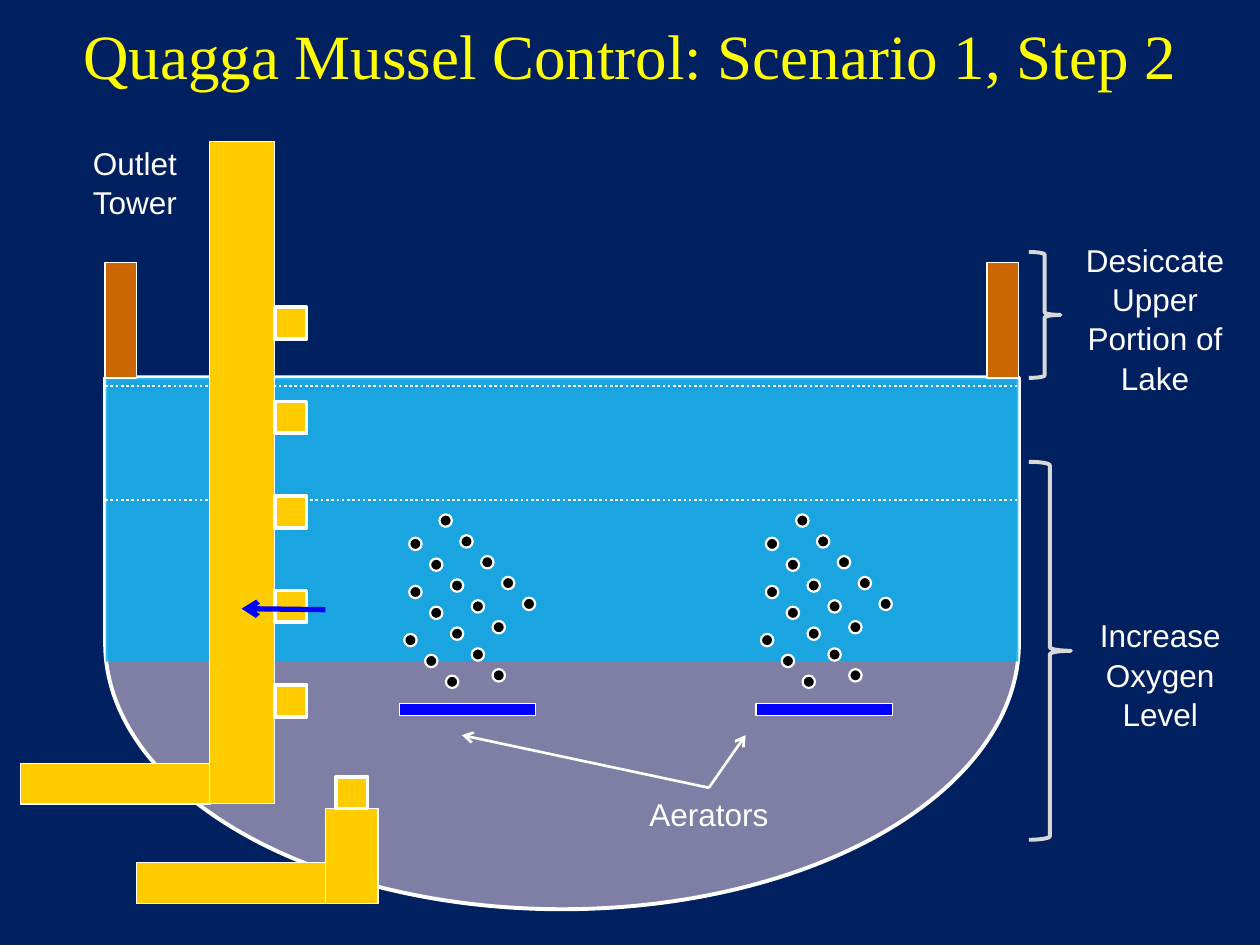
from dataclasses import dataclass
from typing import Any, Optional

import lxml.etree
import pptx
import pptx.dml.color
import pptx.enum.dml
import pptx.enum.shapes
import pptx.enum.text
import pptx.oxml.ns
import pptx.util

Cm = pptx.util.Cm
Pt = pptx.util.Pt
SHAPE = pptx.enum.shapes.MSO_SHAPE
qn = pptx.oxml.ns.qn

NAVY, WHITE, YELLOW = "002060", "FFFFFF", "FFFF00"
GOLD, BROWN, BLUE = "FFCC00", "CC6600", "0000FF"
SEDIMENT, WATER, BLACK, GREY = "7F7FA6", "00B0F0", "000000", "D8D8D8"


@dataclass
class Box:
    """Position and size in centimetres."""
    left: float
    top: float
    width: float
    height: float

    def lengths(self) -> list:
        return [Cm(value) for value in (self.left, self.top, self.width, self.height)]


@dataclass
class Label:
    text: str
    box: Box


@dataclass
class BubbleRow:
    """Diagonal row of bubbles, offset from the aerator's corner."""
    across: float
    up: float
    count: int


def set_color(color_owner: Any, color: str) -> None:
    color_owner.rgb = pptx.dml.color.RGBColor.from_string(color)


def draw_shape(shapes: Any, kind: Any, box: Box, fill: Optional[str] = None,
               line: Optional[str] = WHITE, weight: float = 0.75) -> Any:
    shape = shapes.add_shape(kind, *box.lengths())
    shape.shadow.inherit = False
    if fill:
        shape.fill.solid()
        set_color(shape.fill.fore_color, fill)
    else:
        shape.fill.background()
    if line:
        set_color(shape.line.color, line)
        shape.line.width = Pt(weight)
    else:
        shape.line.fill.background()
    return shape


def draw_line(shapes: Any, start: tuple, end: tuple, color: str = WHITE,
              weight: float = 1.5, arrow: bool = False, dotted: bool = False) -> None:
    connector = shapes.add_connector(
        pptx.enum.shapes.MSO_CONNECTOR.STRAIGHT,
        *[Cm(value) for value in (*start, *end)])
    set_color(connector.line.color, color)
    connector.line.width = Pt(weight)
    if dotted:
        connector.line.dash_style = pptx.enum.dml.MSO_LINE.ROUND_DOT
    properties = connector._element.spPr
    if arrow:
        tail = lxml.etree.SubElement(properties.find(qn("a:ln")), qn("a:tailEnd"))
        tail.set("type", "arrow")
    lxml.etree.SubElement(properties, qn("a:effectLst"))


def write_text(shape: Any, text: str, font: str, size: float, color: str) -> None:
    frame = shape.text_frame
    frame.word_wrap = True
    frame.auto_size = pptx.enum.text.MSO_AUTO_SIZE.NONE
    frame.vertical_anchor = pptx.enum.text.MSO_ANCHOR.TOP
    frame.text = text
    paragraph = frame.paragraphs[0]
    paragraph.alignment = pptx.enum.text.PP_ALIGN.CENTER
    for run in paragraph.runs:
        run.font.name = font
        run.font.size = Pt(size)
        set_color(run.font.color, color)


def draw_label(shapes: Any, label: Label) -> None:
    shape = shapes.add_textbox(*label.box.lengths())
    write_text(shape, label.text, "Arial", 18, WHITE)
    shape.text_frame.paragraphs[0].line_spacing = 1.04


def draw_aerator(shapes: Any, left: float, top: float) -> None:
    group = shapes.add_group_shape().shapes
    draw_shape(group, SHAPE.RECTANGLE, Box(left, top, 2.75, 0.25), BLUE)
    for row in BUBBLE_ROWS:
        for index in range(row.count):
            step = index * 0.42
            bubble = Box(left + row.across + step, top - row.up + step, 0.25, 0.25)
            draw_shape(group, SHAPE.OVAL, bubble, BLACK, weight=1.25)


BUBBLE_ROWS = [BubbleRow(0.1, 1.4, 3), BubbleRow(0.2, 2.37, 5),
               BubbleRow(0.2, 3.34, 5), BubbleRow(0.81, 3.81, 5)]
LABELS = [
    Label("Outlet Tower", Box(1.27, 2.75, 2.9, 2.3)),
    Label("Desiccate Upper Portion of Lake", Box(21.17, 4.7, 4.23, 4.37)),
    Label("Increase Oxygen Level", Box(21.38, 12.27, 4.02, 3.33)),
]
BRACES = [Box(20.74, 5.08, 0.64, 2.54), Box(20.74, 9.31, 0.85, 7.62)]
PIPES = [Box(0.42, 15.39, 3.82, 0.82), Box(2.75, 17.39, 3.81, 0.82),
         Box(6.56, 16.3, 1.06, 1.91), Box(4.23, 2.85, 1.3, 13.35)]
GATE_SIZE = 0.64


def main() -> None:
    presentation = pptx.Presentation()
    presentation.slide_width, presentation.slide_height = Cm(25.4), Cm(19.05)
    slide = presentation.slides.add_slide(presentation.slide_layouts[5])
    slide.background.fill.solid()
    set_color(slide.background.fill.fore_color, NAVY)
    shapes = slide.shapes

    # Title
    title = shapes.title
    title.left, title.top, title.width, title.height = Box(0, 0.2, 25.4, 1.78).lengths()
    write_text(title, "Quagga Mussel Control: Scenario 1, Step 2",
               "Times New Roman", 36, YELLOW)

    # Lake basin, water and water levels
    basin = draw_shape(shapes, SHAPE.FLOWCHART_DELAY, Box(5.97, 3.76, 10.72, 18.42),
                       SEDIMENT, weight=2.25)
    basin.rotation = 90
    water = draw_shape(shapes, SHAPE.RECTANGLE, Box(2.13, 7.62, 18.4, 5.72), WATER, None)
    water_color = water._element.spPr.find(qn("a:solidFill"))[0]
    lxml.etree.SubElement(water_color, qn("a:alpha")).set("val", "79000")
    for level in (7.78, 10.08):
        draw_line(shapes, (2.12, level), (20.53, level), dotted=True)

    # Braces and labels
    for brace in BRACES:
        draw_shape(shapes, SHAPE.RIGHT_BRACE, brace, None, GREY, 2.25)
    for label in LABELS:
        draw_label(shapes, label)

    # Aerators with their caption and pointers
    for left in (8.05, 15.24):
        draw_aerator(shapes, left, 14.18)
    caption = shapes.add_group_shape().shapes
    draw_label(caption, Label("Aerators", Box(12.28, 15.88, 4.02, 1.02)))
    for target_left in (15.03, 9.31):
        draw_line(caption, (14.29, 15.88), (target_left, 14.82), arrow=True)

    # Outlet tower, pipes and gates
    for pipe in PIPES:
        draw_shape(shapes, SHAPE.RECTANGLE, pipe, GOLD)
    gates = [(5.54, 6.19 + index * 1.905) for index in range(5)] + [(6.77, 15.66)]
    for left, top in gates:
        draw_shape(shapes, SHAPE.RECTANGLE, Box(left, top, GATE_SIZE, GATE_SIZE),
                   GOLD, weight=2.25)

    # Exposed banks
    for left in (2.12, 19.9):
        draw_shape(shapes, SHAPE.RECTANGLE, Box(left, 5.29, 0.64, 2.33), BROWN)

    # Outflow
    draw_line(shapes, (6.56, 12.29), (4.87, 12.27), BLUE, 3, arrow=True)

    presentation.save("out.pptx")


if __name__ == "__main__":
    main()
